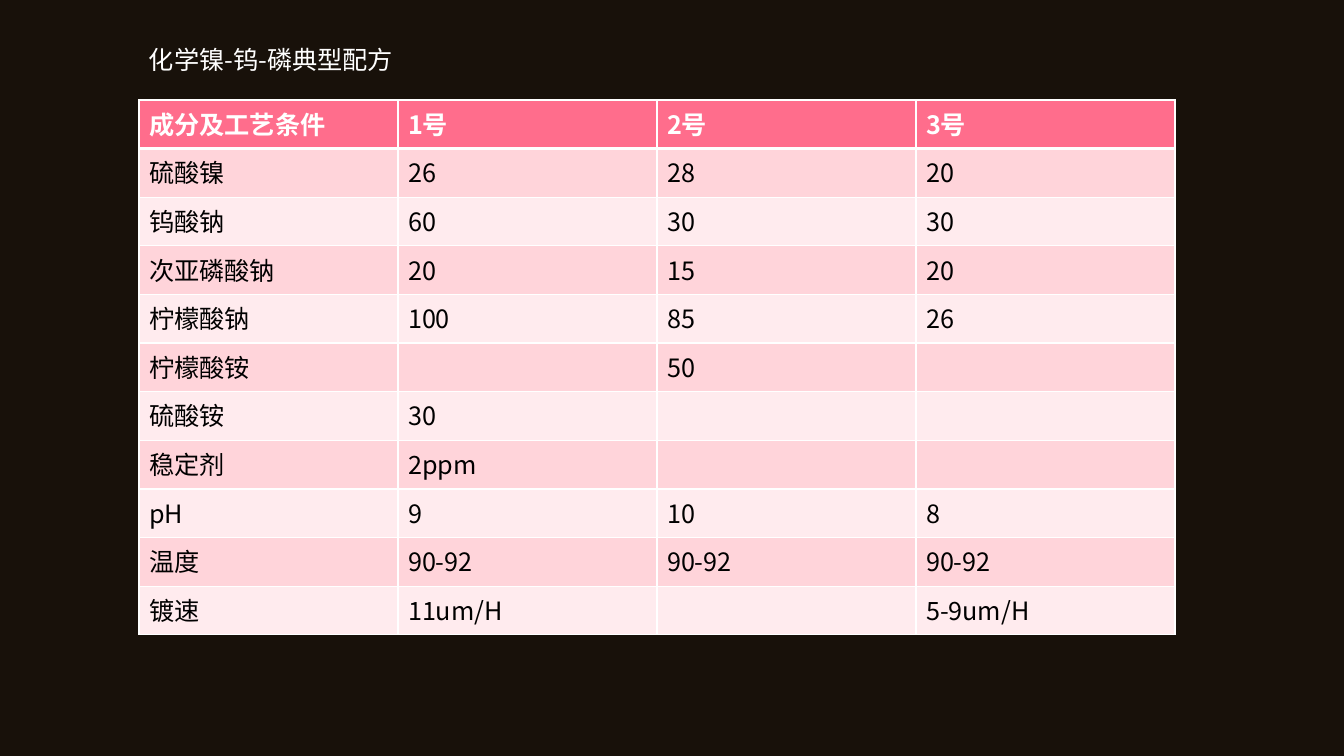
from dataclasses import dataclass

from lxml.etree import SubElement
from pptx import Presentation
from pptx.dml.color import RGBColor
from pptx.enum.text import MSO_AUTO_SIZE as AutoSize
from pptx.oxml.ns import qn
from pptx.slide import Slide
from pptx.table import _Cell as Cell
from pptx.util import Emu, Pt

PX_PER_INCH = 100.8
FONT = "Noto Sans CJK SC"
COLOURS = {
    "page": "18110A",
    "header": "FF6D8C",
    "odd": "FFD4DA",
    "even": "FFEBEE",
    "white": "FFFFFF",
    "black": "000000",
}
TITLE = "化学镍-钨-磷典型配方"
RECIPES = [
    ("成分及工艺条件", "1号", "2号", "3号"),
    ("硫酸镍", "26", "28", "20"),
    ("钨酸钠", "60", "30", "30"),
    ("次亚磷酸钠", "20", "15", "20"),
    ("柠檬酸钠", "100", "85", "26"),
    ("柠檬酸铵", "", "50", ""),
    ("硫酸铵", "30", "", ""),
    ("稳定剂", "2ppm", "", ""),
    ("pH", "9", "10", "8"),
    ("温度", "90-92", "90-92", "90-92"),
    ("镀速", "11um/H", "", "5-9um/H"),
]


@dataclass(frozen=True)
class Area:
    left: int
    top: int
    width: int
    height: int

    def emu(self) -> tuple[Emu, Emu, Emu, Emu]:
        return px(self.left), px(self.top), px(self.width), px(self.height)


@dataclass(frozen=True)
class RowStyle:
    fill: str
    text: str
    bold: bool
    top_line: int
    bottom_line: int


TITLE_AREA = Area(139, 39, 448, 40)
TABLE_AREA = Area(139, 100, 1036, 535)


def px(length: int) -> Emu:
    return Emu(round(length * 914400 / PX_PER_INCH))


def colour(name: str) -> RGBColor:
    return RGBColor.from_string(COLOURS[name])


def row_style(row: int) -> RowStyle:
    if row == 0:
        return RowStyle("header", "white", True, 1, 3)
    return RowStyle("odd" if row % 2 else "even", "black", False, 3 if row == 1 else 1, 1)


def add_text(para, text: str, colour_name: str, bold: bool = False) -> None:
    span = para.add_run()
    span.text = text
    span.font.name = FONT
    span.font.size = Pt(18)
    span.font.bold = bold
    span.font.color.rgb = colour(colour_name)
    SubElement(span.font._element, qn("a:ea"), typeface=FONT)


def add_borders(cell: Cell, style: RowStyle) -> None:
    properties = cell._tc.get_or_add_tcPr()
    widths = {"lnL": 1, "lnR": 1, "lnT": style.top_line, "lnB": style.bottom_line}
    for side, width in widths.items():
        line = SubElement(properties, qn(f"a:{side}"), w=str(Pt(width)))
        fill = SubElement(line, qn("a:solidFill"))
        SubElement(fill, qn("a:srgbClr"), val=COLOURS["white"])


def add_title(page: Slide) -> None:
    frame = page.shapes.add_textbox(*TITLE_AREA.emu()).text_frame
    frame.word_wrap = True
    frame.auto_size = AutoSize.SHAPE_TO_FIT_TEXT
    add_text(frame.paragraphs[0], TITLE, "white")


def add_recipes(page: Slide) -> None:
    rows, columns = len(RECIPES), len(RECIPES[0])
    table = page.shapes.add_table(rows, columns, *TABLE_AREA.emu()).table
    for row, values in enumerate(RECIPES):
        style = row_style(row)
        for column, value in enumerate(values):
            cell = table.cell(row, column)
            add_borders(cell, style)
            cell.fill.solid()
            cell.fill.fore_color.rgb = colour(style.fill)
            if value:
                add_text(cell.text_frame.paragraphs[0], value, style.text, style.bold)


def main() -> None:
    deck = Presentation()
    deck.slide_width, deck.slide_height = px(1344), px(756)
    page = deck.slides.add_slide(deck.slide_layouts[6])

    # Dark page
    page.background.fill.solid()
    page.background.fill.fore_color.rgb = colour("page")

    # Table of recipes under its title
    add_recipes(page)
    add_title(page)
    deck.save("out.pptx")


if __name__ == "__main__":
    main()
